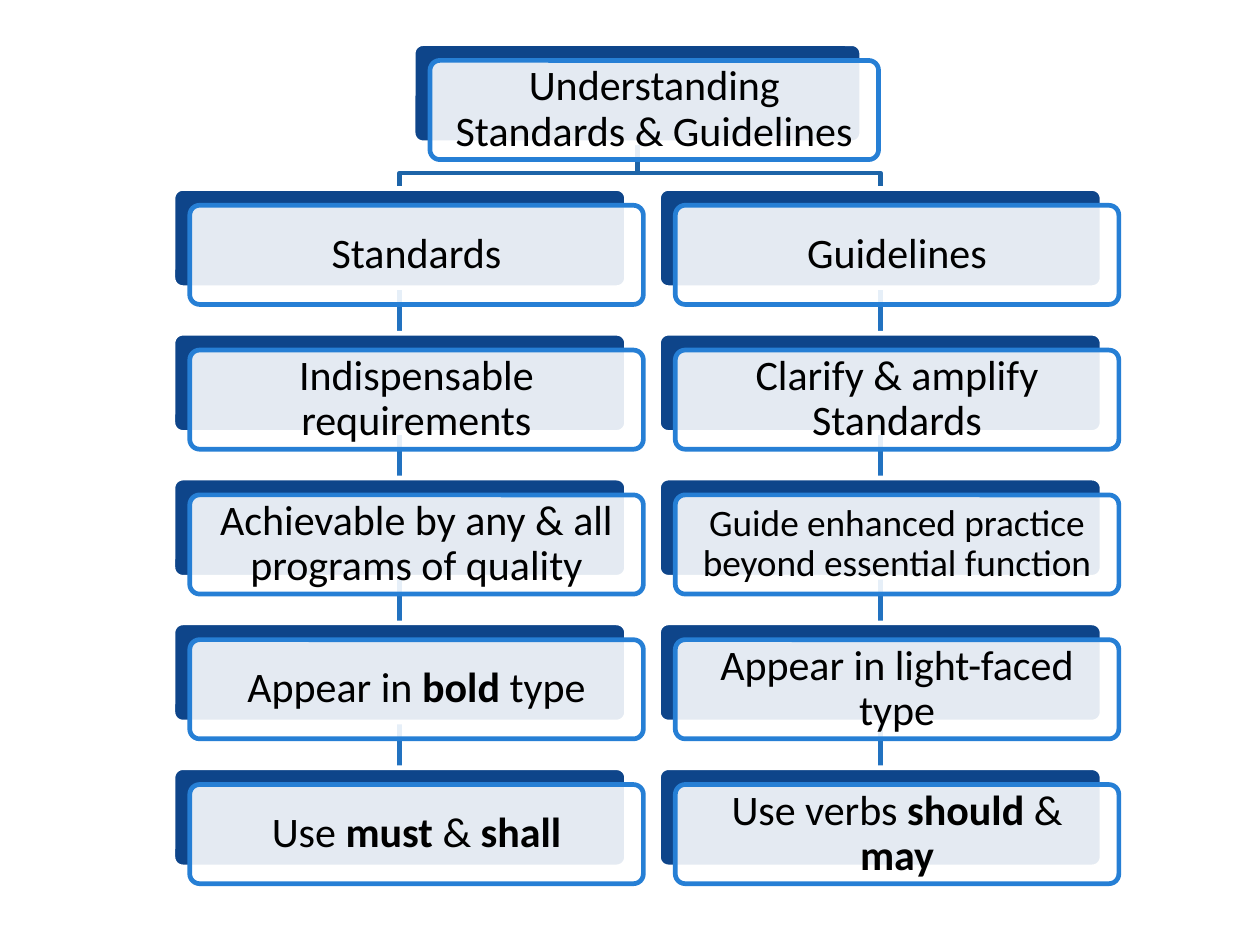
from lxml import etree
from pptx import Presentation
from pptx.dml.color import RGBColor
from pptx.enum.shapes import MSO_CONNECTOR, MSO_SHAPE
from pptx.enum.text import MSO_ANCHOR, MSO_AUTO_SIZE, PP_ALIGN
from pptx.oxml.ns import qn
from pptx.util import Inches, Pt

# Each card is a list of (text, bold) runs and a font size.
TITLE = ([("Understanding Standards & Guidelines", False)], 18)
COLUMNS = [
    # left, width, cards
    (1.03, 2.7, [
        ([("Standards", False)], 18),
        ([("Indispensable requirements", False)], 18),
        ([("Achievable by any & all programs of quality", False)], 18),
        ([("Appear in ", False), ("bold", True), (" type", False)], 18),
        ([("Use ", False), ("must", True), (" & ", False), ("shall", True)], 18),
    ]),
    (3.92, 2.64, [
        ([("Guidelines", False)], 18),
        ([("Clarify & amplify Standards", False)], 18),
        ([("Guide enhanced practice beyond essential function", False)], 16),
        ([("Appear in light-faced type", False)], 18),
        ([("Use verbs ", False), ("should", True), (" & ", False), ("may", True)], 18),
    ]),
]

FONT = "Calibri"
NAVY = RGBColor(0x0E, 0x45, 0x8A)
BLUE = RGBColor(0x26, 0x7F, 0xD5)
FORK_BLUE = RGBColor(0x1D, 0x64, 0xA8)
LINK_BLUE = RGBColor(0x22, 0x72, 0xC0)
WHITE = RGBColor(0xFF, 0xFF, 0xFF)
BLACK = RGBColor(0, 0, 0)

SLIDE_WIDTH = 7.5
SLIDE_HEIGHT = SLIDE_WIDTH * 3 / 4
ROOT_LEFT, ROOT_WIDTH = 2.46, 2.67
FIRST_TOP, LAST_TOP, ROW_COUNT = 0.26, 4.57, 6
ROW_PITCH = (LAST_TOP - FIRST_TOP) / (ROW_COUNT - 1)
CARD_HEIGHT = 0.59
OFFSET = 0.1  # shift of the front card from its backing
FORK_DROP = 0.18
INSET = 0.11
LINE_WIDTH = Pt(2)


def row_top(row):
    return FIRST_TOP + row * ROW_PITCH


def add_panel(slide, left, top, width, fill, line):
    panel = slide.shapes.add_shape(
        MSO_SHAPE.ROUNDED_RECTANGLE,
        Inches(left), Inches(top), Inches(width), Inches(CARD_HEIGHT))
    panel.adjustments[0] = 0.1
    panel.shadow.inherit = False
    panel.fill.solid()
    panel.fill.fore_color.rgb = fill
    panel.line.color.rgb = line
    panel.line.width = LINE_WIDTH
    return panel


def add_card(slide, left, row, width):
    """Add the navy backing and return the translucent front card."""
    top = row_top(row)
    add_panel(slide, left, top, width, NAVY, WHITE)
    front = add_panel(slide, left + OFFSET, top + OFFSET, width, WHITE, BLUE)
    color = front.element.spPr.find(qn("a:solidFill")).find(qn("a:srgbClr"))
    etree.SubElement(color, qn("a:alpha"), val="89000")
    return front


def write_label(shape, label):
    runs, size = label
    frame = shape.text_frame
    frame.word_wrap = True
    frame.auto_size = MSO_AUTO_SIZE.NONE
    frame.vertical_anchor = MSO_ANCHOR.MIDDLE
    frame.margin_left = frame.margin_right = Inches(INSET)
    frame.margin_top = frame.margin_bottom = 0
    paragraph = frame.paragraphs[0]
    paragraph.alignment = PP_ALIGN.CENTER
    paragraph.line_spacing = 0.9
    paragraph.font.name = FONT
    paragraph.font.size = Pt(size)
    paragraph.font.color.rgb = BLACK
    for text, bold in runs:
        run = paragraph.add_run()
        run.text = text
        if bold:
            run.font.bold = True


def add_fork(slide, center):
    """Link the title card to the head of one column."""
    start = ROOT_LEFT + ROOT_WIDTH / 2
    top = row_top(0) + CARD_HEIGHT
    bend = top + FORK_DROP
    builder = slide.shapes.build_freeform(Inches(start), Inches(top))
    corners = [(start, bend), (center, bend), (center, row_top(1))]
    builder.add_line_segments([(Inches(x), Inches(y)) for x, y in corners], close=False)
    fork = builder.convert_to_shape()
    fork.shadow.inherit = False
    fork.fill.background()
    fork.line.color.rgb = FORK_BLUE
    fork.line.width = LINE_WIDTH


def add_link(slide, center, row):
    """Link a card to the one below it."""
    link = slide.shapes.add_connector(
        MSO_CONNECTOR.STRAIGHT,
        Inches(center), Inches(row_top(row) + CARD_HEIGHT),
        Inches(center), Inches(row_top(row + 1)))
    link.line.color.rgb = LINK_BLUE
    link.line.width = LINE_WIDTH
    etree.SubElement(link.element.spPr, qn("a:effectLst"))


def main():
    presentation = Presentation()
    presentation.slide_width = Inches(SLIDE_WIDTH)
    presentation.slide_height = Inches(SLIDE_HEIGHT)
    slide = presentation.slides.add_slide(presentation.slide_layouts[5])

    for left, width, cards in COLUMNS:
        center = left + width / 2
        add_fork(slide, center)
        for row in range(1, len(cards)):
            add_link(slide, center, row)

    root = add_card(slide, ROOT_LEFT, 0, ROOT_WIDTH)
    title = slide.shapes.title
    title.left, title.top = root.left, root.top
    title.width, title.height = root.width, root.height
    write_label(title, TITLE)
    title.element.getparent().append(title.element)  # bring to front

    for left, width, cards in COLUMNS:
        for row, label in enumerate(cards, start=1):
            write_label(add_card(slide, left, row, width), label)

    presentation.save("out.pptx")


if __name__ == "__main__":
    main()
